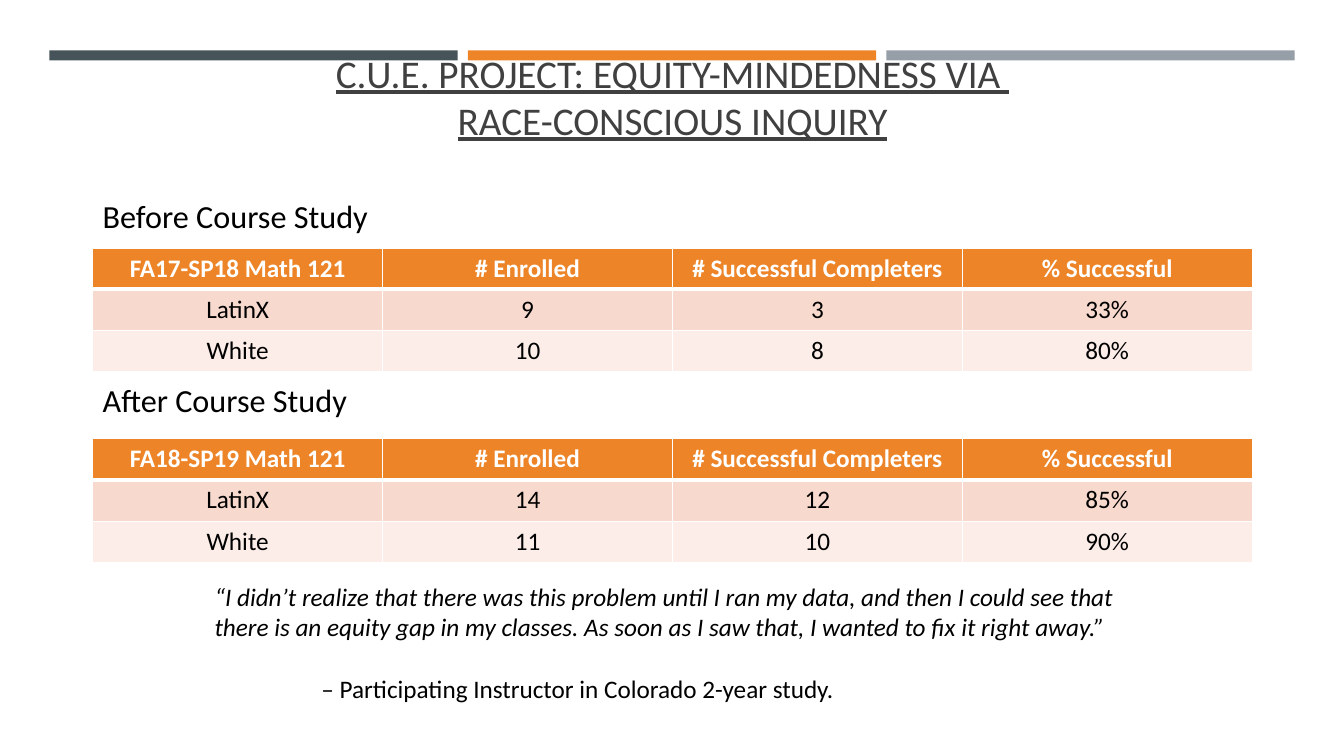
from lxml import etree
from pptx import Presentation, util as u
from pptx.dml.color import RGBColor
from pptx.enum import shapes, text
from pptx.oxml import ns

FONT = "Calibri"
TITLE_SIZE, HEADING_SIZE, BODY_SIZE = 28, 23, 18
BLACK, WHITE, GREY = "000000", "FFFFFF", "404040"
ORANGE = "ED8428"
BAR_FILLS = ["465359", ORANGE, "969FA7"]
ROW_FILLS = [ORANGE, "F8D9CD", "FCEDE8"]

LEFT, WIDTH = 0.92, 11.5
ROW_HEIGHT = 0.41
HEADING_HEIGHT = 0.49
SOURCE_INDENT = 1.06

MEASURES = ["# Enrolled", "# Successful Completers", "% Successful"]
# Heading, top of heading, top of table, table rows
STUDIES = [
    ("Before Course Study", 1.9, 2.46, [
        ["FA17-SP18 Math 121", *MEASURES],
        ["LatinX", "9", "3", "33%"],
        ["White", "10", "8", "80%"],
    ]),
    ("After Course Study", 3.72, 4.35, [
        ["FA18-SP19 Math 121", *MEASURES],
        ["LatinX", "14", "12", "85%"],
        ["White", "11", "10", "90%"],
    ]),
]
TITLE = "C.U.E. PROJECT: EQUITY-MINDEDNESS VIA \vRACE-CONSCIOUS INQUIRY"
QUOTE = (
    "“I didn’t realize that there was this problem until I ran my data, "
    "and then I could see that there is an equity gap in my classes. "
    "As soon as I saw that, I wanted to fix it right away.”"
)
SOURCE = "– Participating Instructor in Colorado 2-year study."


def color(value):
    return RGBColor.from_string(value)


def inches(*lengths):
    return [u.Inches(length) for length in lengths]


def write(paragraph, wording, size, ink=BLACK, bold=False, italic=False, underline=False):
    paragraph.text = wording
    font = paragraph.font
    font.name, font.size = FONT, u.Pt(size)
    font.color.rgb = color(ink)
    font.bold, font.italic, font.underline = bold, italic, underline


def add_bars(slide, left, top, width, height, gap=0.1):
    count = len(BAR_FILLS)
    bar_width = (width - (count - 1) * gap) / count
    for index, fill in enumerate(BAR_FILLS):
        bar_left = left + index * (bar_width + gap)
        bar = slide.shapes.add_shape(
            shapes.MSO_SHAPE.RECTANGLE, *inches(bar_left, top, bar_width, height))
        bar.shadow.inherit = False
        bar.fill.solid()
        bar.fill.fore_color.rgb = color(fill)
        bar.line.fill.background()


def place_title(slide, left, top, width, height):
    """Fill the title placeholder and bring it in front of the bars."""
    title = slide.shapes.title
    title.left, title.top, title.width, title.height = inches(left, top, width, height)
    frame = title.text_frame
    frame.vertical_anchor = text.MSO_ANCHOR.BOTTOM
    frame.auto_size = text.MSO_AUTO_SIZE.NONE
    paragraph = frame.paragraphs[0]
    paragraph.alignment = text.PP_ALIGN.CENTER
    write(paragraph, TITLE, TITLE_SIZE, GREY, underline=True)
    title.element.getparent().append(title.element)


def add_text_box(slide, left, top, width, height):
    frame = slide.shapes.add_textbox(*inches(left, top, width, height)).text_frame
    frame.word_wrap = True
    frame.auto_size = text.MSO_AUTO_SIZE.SHAPE_TO_FIT_TEXT
    return frame


def add_heading(slide, wording, left, top, width, height):
    frame = add_text_box(slide, left, top, width, height)
    write(frame.paragraphs[0], wording, HEADING_SIZE)


def set_bottom_border(cell, ink, points):
    properties = cell._tc.get_or_add_tcPr()
    border = etree.Element(ns.qn("a:lnB"), w=str(u.Pt(points)))
    fill = etree.SubElement(border, ns.qn("a:solidFill"))
    etree.SubElement(fill, ns.qn("a:srgbClr"), val=ink)
    properties.insert(0, border)  # Borders come before the fill


def add_results(slide, rows, left, top, width):
    height = ROW_HEIGHT * len(rows)
    table = slide.shapes.add_table(
        len(rows), len(rows[0]), *inches(left, top, width, height)).table
    for row_index, (values, fill) in enumerate(zip(rows, ROW_FILLS)):
        is_header = row_index == 0
        ink = WHITE if is_header else BLACK
        for column_index, value in enumerate(values):
            cell = table.cell(row_index, column_index)
            cell.fill.solid()
            cell.fill.fore_color.rgb = color(fill)
            if is_header:
                set_bottom_border(cell, WHITE, 3)
            paragraph = cell.text_frame.paragraphs[0]
            paragraph.alignment = text.PP_ALIGN.CENTER
            write(paragraph, value, BODY_SIZE, ink, bold=is_header)


def add_quote(slide, left, top, width, height):
    frame = add_text_box(slide, left, top, width, height)
    write(frame.paragraphs[0], QUOTE, BODY_SIZE, italic=True)
    source = frame.add_paragraph()
    write(source, SOURCE, BODY_SIZE)
    source.space_before = u.Pt(22)
    source._p.get_or_add_pPr().set("marL", str(u.Inches(SOURCE_INDENT)))


def main():
    presentation = Presentation()
    presentation.slide_width, presentation.slide_height = inches(13.33, 7.5)
    title_only = presentation.slide_layouts.get_by_name("Title Only")
    slide = presentation.slides.add_slide(title_only)
    add_bars(slide, 0.49, 0.5, 12.35, 0.1)
    place_title(slide, LEFT, 0.4, WIDTH, 1.07)
    for heading, heading_top, table_top, rows in STUDIES:
        add_results(slide, rows, LEFT, table_top, WIDTH)
        add_heading(slide, heading, LEFT, heading_top, WIDTH / 2, HEADING_HEIGHT)
    add_quote(slide, 2.03, 5.72, 9.26, 1.31)
    presentation.save("out.pptx")


if __name__ == "__main__":
    main()
